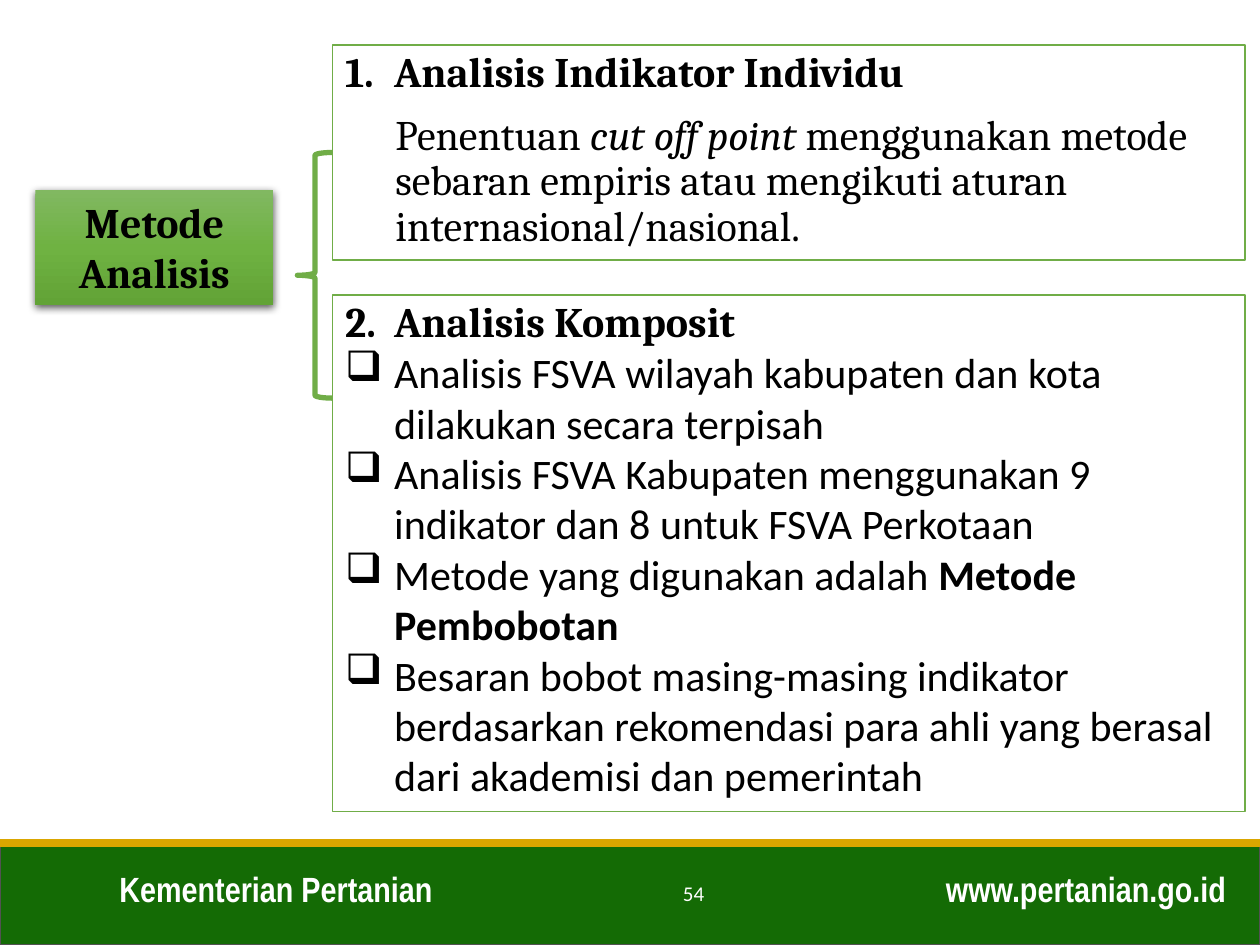
import pptx
import pptx.util
import pptx.dml.color
import pptx.enum.shapes
import pptx.enum.text
import pptx.oxml
import pptx.oxml.ns

Inches, Pt = pptx.util.Inches, pptx.util.Pt
RGB = pptx.dml.color.RGBColor
Shape = pptx.enum.shapes.MSO_SHAPE
Align = pptx.enum.text.PP_ALIGN
Anchor = pptx.enum.text.MSO_ANCHOR
Fit = pptx.enum.text.MSO_AUTO_SIZE

WHITE = RGB(0xFF, 0xFF, 0xFF)
BLACK = RGB(0, 0, 0)
GREEN = RGB(0x70, 0xAD, 0x47)
FOREST = RGB(0x14, 0x6B, 0x05)
GREY = RGB(0x52, 0x52, 0x52)
GOLD = RGB(0xDA, 0xA6, 0x00)
FADE = [(0, RGB(0x81, 0xB8, 0x61)), (50, RGB(0x6F, 0xB2, 0x42)), (100, RGB(0x62, 0xA3, 0x36))]

WIDE, HIGH = 10, 7.5
HANG = 0.39
HEAD = dict(name="Cambria", size=Pt(24), bold=True)
BODY = dict(name="Cambria", size=Pt(24), bold=False)
ITEM = dict(name="Calibri", size=Pt(24), bold=False)
SIGN = dict(name="Arial Narrow", size=Pt(20), bold=True)
PAGE = dict(name="Calibri", size=Pt(12), bold=False)
LOOSE = dict(line_spacing=0.9, space_before=Pt(10))

ITEMS = [
    [("Analisis FSVA wilayah kabupaten dan kota dilakukan secara terpisah", {})],
    [("Analisis FSVA Kabupaten menggunakan 9 indikator dan 8 untuk FSVA Perkotaan", {})],
    [("Metode yang digunakan adalah ", {}), ("Metode Pembobotan", {"bold": True})],
    [("Besaran bobot masing-masing indikator berdasarkan rekomendasi para ahli "
      "yang berasal dari akademisi dan pemerintah", {})],
]


def part(box, x, y, w, h):
    """Box made of shares of another box."""
    left, top, wide, high = box
    return left + x * wide, top + y * high, w * wide, h * high


def node(tag, body="", **attrs):
    text = " ".join(f'{key}="{val}"' for key, val in attrs.items())
    return pptx.oxml.parse_xml(f'<a:{tag} {pptx.oxml.ns.nsdecls("a")} {text}>{body}</a:{tag}>')


def draw(slide, kind, box, line, width, fill=None):
    shape = slide.shapes.add_shape(kind, *map(Inches, box))
    shape.shadow.inherit = False
    if fill is None:
        shape.fill.background()
    else:
        shape.fill.solid()
        shape.fill.fore_color.rgb = fill
    if line is None:
        shape.line.fill.background()
    else:
        shape.line.color.rgb = line
        shape.line.width = Pt(width)
    return shape


def frame(shape, anchor=Anchor.TOP, fit=Fit.SHAPE_TO_FIT_TEXT):
    body = shape.text_frame
    body.word_wrap, body.vertical_anchor, body.auto_size = True, anchor, fit
    return body


def write(para, runs, font, color=BLACK, left=0, first=0, **form):
    for key, val in {"alignment": Align.LEFT, **form}.items():
        setattr(para, key, val)
    props = para._p.get_or_add_pPr()
    props.set("marL", str(Inches(left)))
    props.set("indent", str(Inches(first)))
    for text, extra in runs:
        run = para.add_run()
        run.text = text
        for key, val in {**font, **extra}.items():
            setattr(run.font, key, val)
        run.font.color.rgb = color


def label(slide, box, text, font, align, **form):
    body = frame(slide.shapes.add_textbox(*map(Inches, box)), **form)
    write(body.paragraphs[0], [(text, {})], font, WHITE, alignment=align)


def footer(slide, box):
    draw(slide, Shape.RECTANGLE, box, GREY, 1, FOREST)
    label(slide, part(box, 0.085, 0.18, 0.366, 0.54), "Kementerian Pertanian", SIGN, Align.LEFT)
    label(slide, part(box, 0.705, 0.18, 0.278, 0.54), "www.pertanian.go.id", SIGN, Align.RIGHT)
    left, top, wide, _ = box
    rule = slide.shapes.add_connector(pptx.enum.shapes.MSO_CONNECTOR.STRAIGHT,
                                      *map(Inches, (left, top, left + wide, top)))
    rule.line.color.rgb = GOLD
    rule.line.width = Pt(4.5)
    rule._element.spPr.append(node("effectLst"))
    label(slide, part(box, 0.438, 0.25, 0.225, 0.49), "54", PAGE, Align.CENTER,
          anchor=Anchor.MIDDLE, fit=Fit.NONE)


def panel(slide, box, title):
    """Framed box with a numbered heading."""
    body = frame(draw(slide, Shape.RECTANGLE, box, GREEN, 1, WHITE))
    write(body.paragraphs[0], [(title, {})], HEAD, left=HANG, first=-HANG, **LOOSE)
    return body


def single(slide, box):
    body = panel(slide, box, "1.\tAnalisis Indikator Individu")
    runs = [("Penentuan ", {}), ("cut off point ", {"italic": True}),
            ("menggunakan metode sebaran empiris atau mengikuti aturan "
             "internasional/nasional.", {})]
    write(body.add_paragraph(), runs, BODY, left=0.4, **LOOSE)


def joint(slide, box):
    body = panel(slide, box, "2.\tAnalisis Komposit")
    for runs in ITEMS:
        para = body.add_paragraph()
        write(para, runs, ITEM, left=HANG, first=-HANG)
        para._p.get_or_add_pPr().append(node("buChar", char="❑"))


def topic(slide, box):
    """Shaded box naming the subject."""
    shape = draw(slide, Shape.RECTANGLE, box, None, 0, GREEN)
    props = shape._element.spPr
    stops = "".join(f'<a:gs pos="{pos * 1000}"><a:srgbClr val="{color}"/></a:gs>'
                    for pos, color in FADE)
    fade = node("gradFill", f'<a:gsLst>{stops}</a:gsLst><a:lin ang="5400000" scaled="0"/>')
    props.replace(props.find(pptx.oxml.ns.qn("a:solidFill")), fade)
    shade = (f'<a:outerShdw blurRad="{Pt(4.5)}" dist="{Pt(1.5)}" dir="5400000" algn="ctr" '
             f'rotWithShape="0"><a:srgbClr val="{BLACK}"><a:alpha val="63000"/>'
             '</a:srgbClr></a:outerShdw>')
    props.replace(props.find(pptx.oxml.ns.qn("a:effectLst")), node("effectLst", shade))
    write(frame(shape).paragraphs[0], [("Metode Analisis", {})], HEAD, alignment=Align.CENTER)


def main():
    deck = pptx.Presentation()
    deck.slide_width, deck.slide_height = Inches(WIDE), Inches(HIGH)
    slide = deck.slides.add_slide(deck.slide_layouts[6])
    page = (0, 0, WIDE, HIGH)
    main_box = (2.64, 0.36, 7.24, 6.08)
    footer(slide, part(page, 0, 0.892, 1, 0.108))
    single(slide, part(main_box, 0, 0, 1, 0.28))
    topic(slide, (0.28, 1.51, 1.89, 0.91))
    joint(slide, part(main_box, 0, 0.326, 1, 0.674))
    draw(slide, Shape.LEFT_BRACE, (2.36, 1.21, 0.28, 1.95), GREEN, 3)
    deck.save("out.pptx")


if __name__ == "__main__":
    main()
